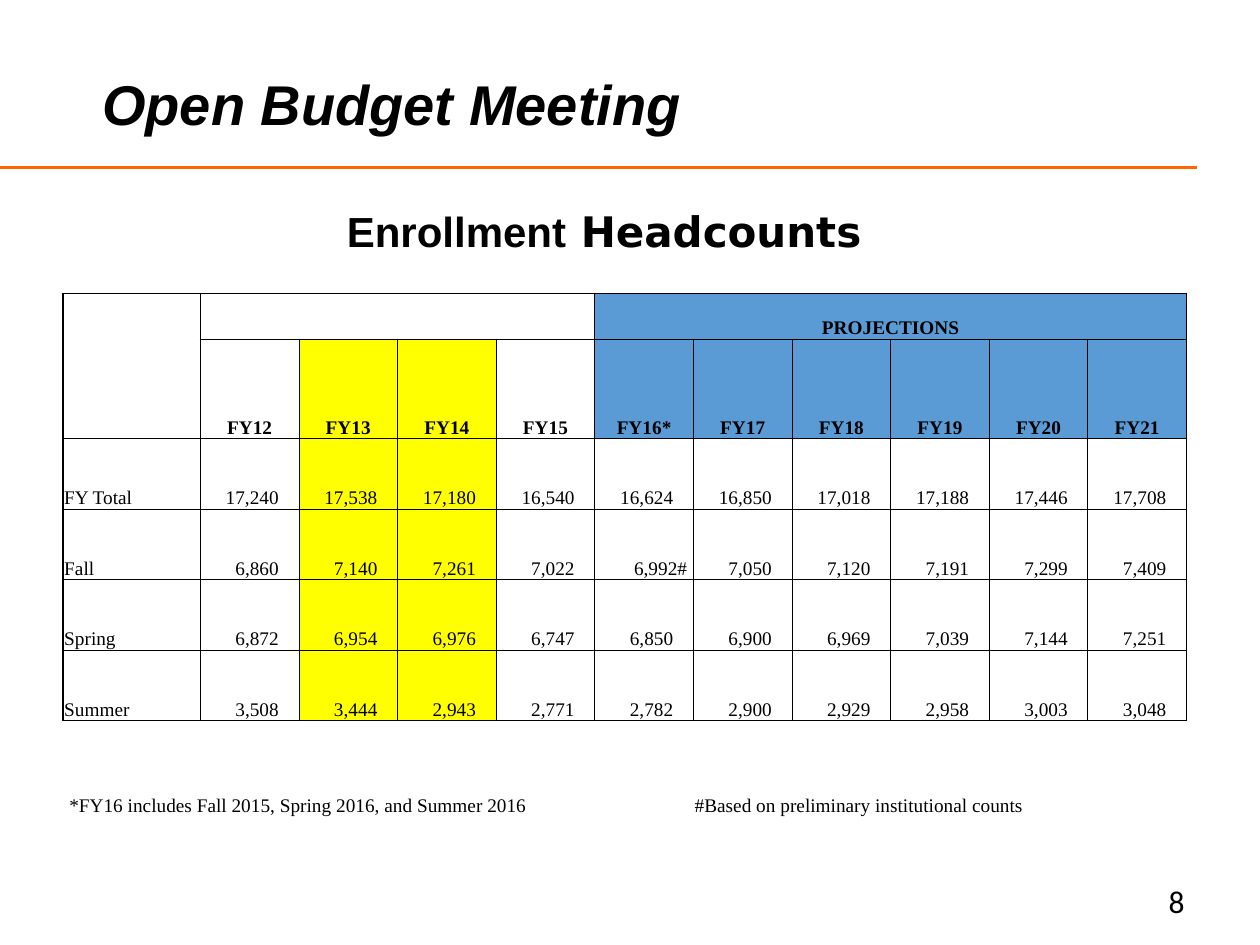
from lxml import etree
from pptx import Presentation
from pptx import util as u
from pptx.dml.color import RGBColor
from pptx.enum import shapes, text
from pptx.oxml.ns import qn

BLACK, WHITE, BLUE, YELLOW, ORANGE = "000000", "FFFFFF", "5B9BD5", "FFFF00", "FF6600"
SERIF = "Times New Roman"
NO_GRID = "{2D5ABB26-0587-4C30-8999-92F81FD0307C}"
LEFT, CENTER, RIGHT = text.PP_ALIGN.LEFT, text.PP_ALIGN.CENTER, text.PP_ALIGN.RIGHT

BOXES = [
    ((0.07, 0.5, 6.08, 0.5), CENTER, 32, [("Open Budget Meeting", "Arial", True, True)]),
    ((7.17, 6.95, 2.33, 0.4), RIGHT, 18, [("8", "Calibri", False, False)]),
    ((0.42, 1.58, 8.75, 0.5), CENTER, 24,
     [("Enrollment", "Arial", True, False), (" Headcounts", "DejaVu Sans", True, False)]),
]
YEARS = ["FY12", "FY13", "FY14", "FY15", "FY16*", "FY17", "FY18", "FY19", "FY20", "FY21"]
COUNTS = {
    "FY Total": ["17,240", "17,538", "17,180", "16,540", "16,624",
                 "16,850", "17,018", "17,188", "17,446", "17,708"],
    "Fall": ["6,860", "7,140", "7,261", "7,022", "6,992#",
             "7,050", "7,120", "7,191", "7,299", "7,409"],
    "Spring": ["6,872", "6,954", "6,976", "6,747", "6,850",
               "6,900", "6,969", "7,039", "7,144", "7,251"],
    "Summer": ["3,508", "3,444", "2,943", "2,771", "2,782",
               "2,900", "2,929", "2,958", "3,003", "3,048"],
}
NOTES = {0: "*FY16 includes Fall 2015, Spring 2016, and Summer 2016",
         6: "#Based on preliminary institutional counts"}
COLS = [1.09] + [0.783] * len(YEARS)
ROWS = [0.36, 0.79] + [0.56] * len(COUNTS) + [0.38, 0.38]
SPANS = [(0, 0, 1, 0), (0, 1, 0, 4), (0, 5, 0, 10), (7, 0, 7, 4), (7, 6, 7, 10)]
GRID_END = 1 + len(COUNTS)


def rgb(value):
    return RGBColor.from_string(value)


def add_run(p, words, font, size, bold=False, italic=False):
    r = p.add_run()
    r.text = words
    r.font.name, r.font.size = font, u.Pt(size)
    r.font.bold, r.font.italic = bold, italic
    r.font.color.rgb = rgb(BLACK)


def write(cell, words, align, bold=False, left=0.01, right=0.01):
    cell.margin_left, cell.margin_right = u.Inches(left), u.Inches(right)
    p = cell.text_frame.paragraphs[0]
    p.alignment = align
    add_run(p, words, SERIF, 11, bold)


def border(cell, side, points):
    ln = etree.SubElement(cell._tc.get_or_add_tcPr(), qn("a:" + side), w=str(u.Pt(points)))
    fill = etree.SubElement(ln, qn("a:solidFill"))
    etree.SubElement(fill, qn("a:srgbClr"), val=BLACK)


def outline(cell, row, col):
    last_row = row + cell.span_height - 1 if cell.is_merge_origin else row
    last_col = col + cell.span_width - 1 if cell.is_merge_origin else col
    border(cell, "lnL", 1 if col < 2 else 0.5)
    border(cell, "lnR", 1 if last_col in (0, len(YEARS)) else 0.5)
    border(cell, "lnT", 1 if row == 0 else 0.5)
    border(cell, "lnB", 1 if last_row == GRID_END else 0.5)


def fill_for(row, col):
    if col in (2, 3) and 1 <= row <= GRID_END:
        return YELLOW
    return BLUE if col >= 5 and row < 2 else WHITE


def add_headcounts(s):
    frame = s.shapes.add_table(len(ROWS), len(COLS), u.Inches(0.5), u.Inches(2.33),
                               u.Inches(sum(COLS)), u.Inches(sum(ROWS)))
    table = frame.table
    table.first_row = table.horz_banding = False
    table._tbl.tblPr.find(qn("a:tableStyleId")).text = NO_GRID
    for column, width in zip(table.columns, COLS):
        column.width = u.Inches(width)
    for line, height in zip(table.rows, ROWS):
        line.height = u.Inches(height)
    for top, left, bottom, right in SPANS:
        table.cell(top, left).merge(table.cell(bottom, right))

    for row in range(len(ROWS)):
        for col in range(len(COLS)):
            cell = table.cell(row, col)
            cell.margin_left = cell.margin_right = cell.margin_top = u.Inches(0.01)
            cell.margin_bottom = 0
            cell.vertical_anchor = text.MSO_ANCHOR.BOTTOM
            if row <= GRID_END and not cell.is_spanned:
                outline(cell, row, col)
            cell.fill.solid()
            cell.fill.fore_color.rgb = rgb(fill_for(row, col))

    write(table.cell(0, 5), "PROJECTIONS", CENTER, True)
    for col, year in enumerate(YEARS, 1):
        write(table.cell(1, col), year, CENTER, True)
    for row, (term, counts) in enumerate(COUNTS.items(), 2):
        write(table.cell(row, 0), term, LEFT)
        for col, count in enumerate(counts, 1):
            write(table.cell(row, col), count, RIGHT, right=0.05 if "#" in count else 0.16)
    for col, note in NOTES.items():
        write(table.cell(7, col), note, LEFT, left=0.01 if col else 0.05)


def main():
    prs = Presentation()
    prs.slide_width, prs.slide_height = u.Inches(10), u.Inches(7.5)
    s = prs.slides.add_slide(prs.slide_layouts[6])

    rule = s.shapes.add_connector(shapes.MSO_CONNECTOR.STRAIGHT, 0, u.Inches(1.33),
                                  u.Inches(9.5), u.Inches(1.33))
    rule.line.color.rgb = rgb(ORANGE)
    rule.line.width = u.Pt(1.5)
    etree.SubElement(rule._element.spPr, qn("a:effectLst"))

    for place, align, size, runs in BOXES:
        tf = s.shapes.add_textbox(*map(u.Inches, place)).text_frame
        tf.word_wrap = True
        p = tf.paragraphs[0]
        p.alignment = align
        for words, font, bold, italic in runs:
            add_run(p, words, font, size, bold, italic)

    add_headcounts(s)
    prs.save("out.pptx")


if __name__ == "__main__":
    main()
